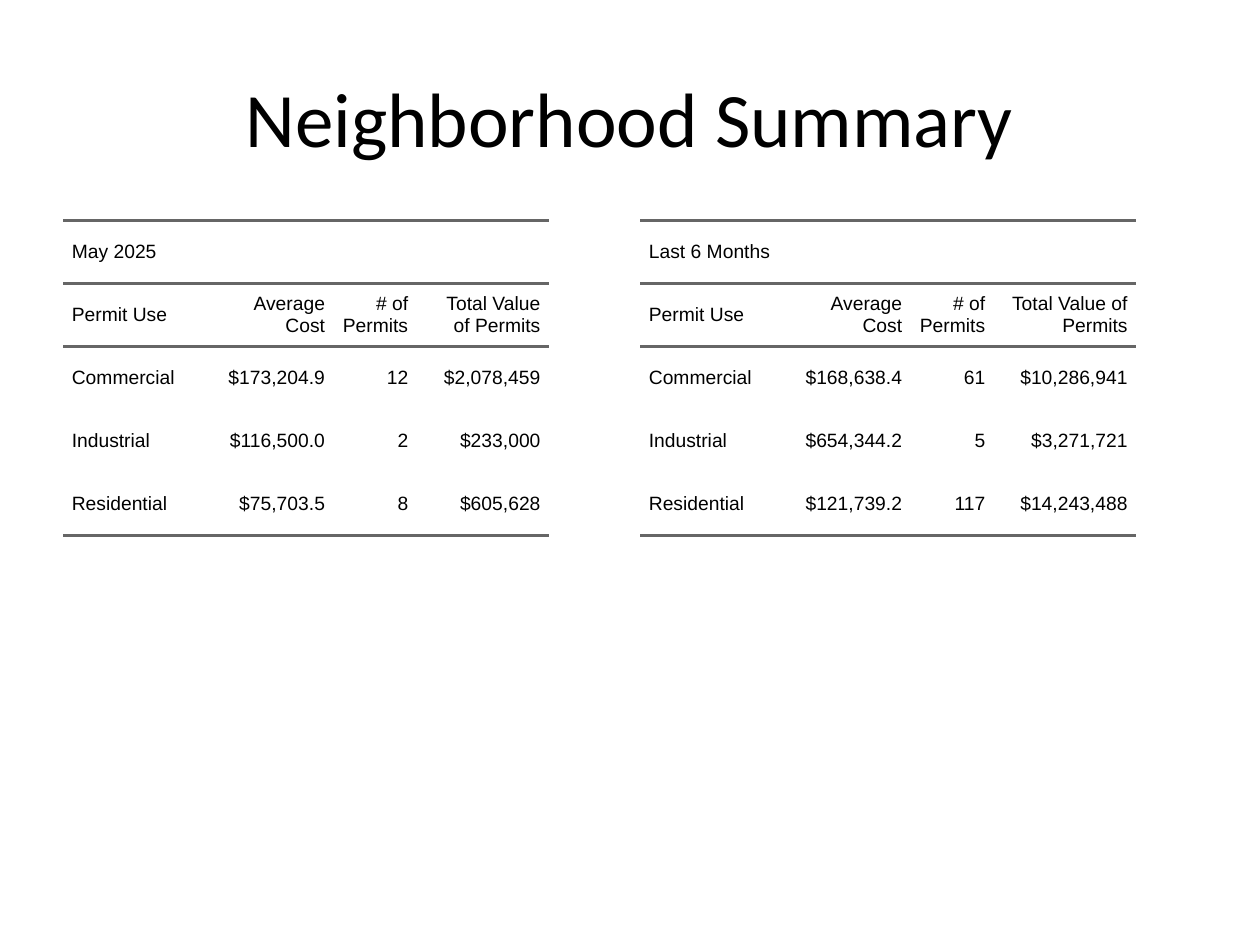
"""Build the Neighborhood Summary slide with two permit tables."""
from lxml import etree
from pptx import Presentation
from pptx import util as u
from pptx.dml.color import RGBColor
from pptx.enum import text
from pptx.oxml.ns import qn


def color(value):
    return RGBColor.from_string(value)


def add_border(cell, tag, value="666666", points=1.5):
    line = etree.Element(qn(tag), w=str(u.Pt(points)))
    fill = etree.SubElement(line, qn("a:solidFill"))
    etree.SubElement(fill, qn("a:srgbClr"), val=value)
    cell._tc.get_or_add_tcPr().insert(0, line)


NO_STYLE = "{2D5ABB26-0587-4C30-8999-92F81FD0307C}"
ROW_HEIGHT = 0.5
HEADINGS = ["Permit Use", "Average Cost", "# of Permits", "Total Value of Permits"]
PERIODS = [
    ("May 2025", 0.5, [1.1, 1.05, 0.66, 1.05], [
        ["Commercial", "$173,204.9", "12", "$2,078,459"],
        ["Industrial", "$116,500.0", "2", "$233,000"],
        ["Residential", "$75,703.5", "8", "$605,628"],
    ]),
    ("Last 6 Months", 5.08, [1.1, 1.05, 0.66, 1.13], [
        ["Commercial", "$168,638.4", "61", "$10,286,941"],
        ["Industrial", "$654,344.2", "5", "$3,271,721"],
        ["Residential", "$121,739.2", "117", "$14,243,488"],
    ]),
]

deck = Presentation()
deck.slide_width, deck.slide_height = u.Inches(10), u.Inches(7.5)
page = deck.slides.add_slide(deck.slide_layouts[5])

title = page.shapes.title
title.left, title.top = u.Inches(0.5), u.Inches(0.3)
title.width, title.height = u.Inches(9), u.Inches(1.25)
title.text_frame.text = "Neighborhood Summary"
title.text_frame.vertical_anchor = text.MSO_ANCHOR.MIDDLE
heading = title.text_frame.paragraphs[0]
heading.alignment = text.PP_ALIGN.CENTER
heading.font.size = u.Pt(44)
heading.font.name = "Calibri"
heading.font.color.rgb = color("000000")

for period, left, widths, records in PERIODS:
    rows = [[period, "", "", ""], HEADINGS, *records]
    frame = page.shapes.add_table(
        len(rows), len(widths), u.Inches(left), u.Inches(1.75),
        u.Inches(sum(widths)), u.Inches(ROW_HEIGHT * len(rows)))
    table = frame.table
    table.first_row = table.horz_banding = False
    table._tbl.tblPr.find(qn("a:tableStyleId")).text = NO_STYLE
    for column, width in zip(table.columns, widths):
        column.width = u.Inches(width)
    for row_index, values in enumerate(rows):
        table.rows[row_index].height = u.Inches(ROW_HEIGHT)
        for column_index, value in enumerate(values):
            cell = table.cell(row_index, column_index)
            cell.fill.background()
            cell.vertical_anchor = text.MSO_ANCHOR.MIDDLE
            cell.margin_left = cell.margin_right = u.Inches(0.07)
            cell.margin_top = cell.margin_bottom = u.Inches(0.07)
            cell.text = value
            para = cell.text_frame.paragraphs[0]
            para.alignment = text.PP_ALIGN.RIGHT if column_index else text.PP_ALIGN.LEFT
            para.space_before = para.space_after = u.Pt(5)
            para.font.size = u.Pt(11)
            para.font.name = "Arial"
            para.font.color.rgb = color("000000")
            if row_index in (0, 1, len(rows) - 1):
                add_border(cell, "a:lnB")
            if row_index in (0, 1):
                add_border(cell, "a:lnT")
    table.cell(0, 0).merge(table.cell(0, len(widths) - 1))

deck.save("out.pptx")
